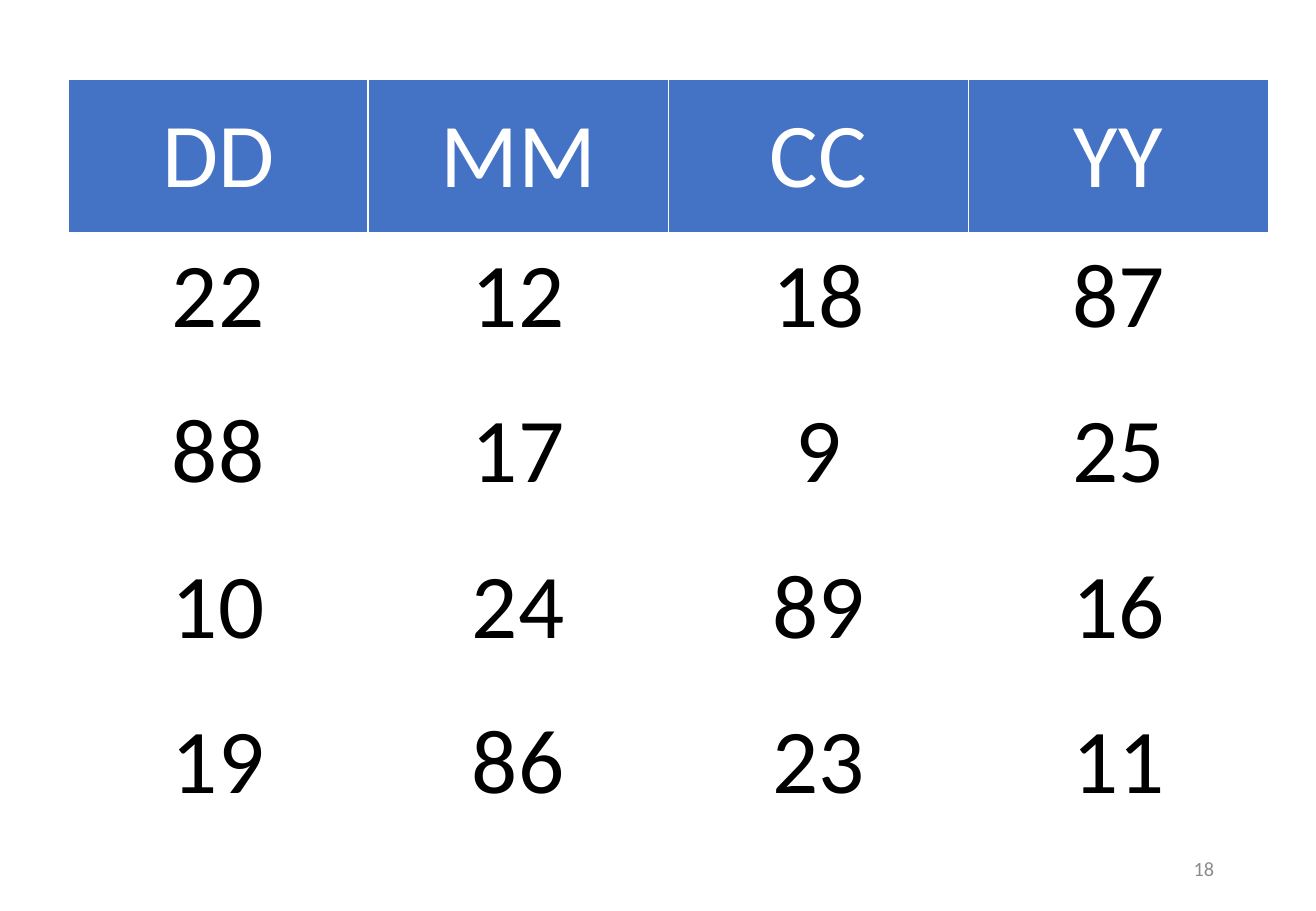
from pptx import Presentation
from pptx.dml.color import RGBColor
from pptx.enum.text import MSO_ANCHOR as Anchor, PP_ALIGN as Align
from pptx.oxml.ns import qn
from pptx.util import Emu, Pt
from lxml.etree import SubElement

BLUE = RGBColor(0x44, 0x72, 0xC4)
WHITE = RGBColor(0xFF, 0xFF, 0xFF)
BLACK = RGBColor(0x00, 0x00, 0x00)
GRAY = RGBColor(0x8C, 0x8C, 0x8C)

SQUARE = [
    ["DD", "MM", "CC", "YY"],
    ["22", "12", "18", "87"],
    ["88", "17", "9", "25"],
    ["10", "24", "89", "16"],
    ["19", "86", "23", "11"],
]


def px(length):
    return Emu(length * 9144)


class SlideBuilder:
    font_name = "Calibri"

    def __init__(self, deck):
        self.page = deck.slides.add_slide(deck.slide_layouts[6])

    def style_text(self, frame, size, color, align):
        for para in frame.paragraphs:
            para.alignment = align
            for span in para.runs:
                span.font.name = self.font_name
                span.font.size = Pt(size)
                span.font.bold = False
                span.font.color.rgb = color

    def set_borders(self, cell, color, widths):
        properties = cell._tc.get_or_add_tcPr()
        for side, width in widths.items():
            line = SubElement(properties, qn(f"a:ln{side}"), w=str(Pt(width)))
            fill = SubElement(line, qn("a:solidFill"))
            SubElement(fill, qn("a:srgbClr"), val=str(color))

    def add_table(self, rows, left, top, column_width, row_height, size):
        row_count, column_count = len(rows), len(rows[0])
        table = self.page.shapes.add_table(
            row_count, column_count, px(left), px(top),
            px(column_width * column_count), px(row_height * row_count),
        ).table
        table.horz_banding = False
        for column in table.columns:
            column.width = px(column_width)
        for row_index, values in enumerate(rows):
            is_header = row_index == 0
            table.rows[row_index].height = px(row_height)
            for column_index, value in enumerate(values):
                cell = table.cell(row_index, column_index)
                cell.text_frame.text = value
                cell.margin_left = cell.margin_right = px(8)
                cell.margin_top = cell.margin_bottom = px(5)
                cell.vertical_anchor = Anchor.MIDDLE if is_header else Anchor.TOP
                self.style_text(cell.text_frame, size, WHITE if is_header else BLACK, Align.CENTER)
                top_width = 3 if row_index == 1 else 1
                bottom_width = 3 if is_header else 1
                self.set_borders(cell, WHITE, {"L": 1, "R": 1, "T": top_width, "B": bottom_width})
                if is_header:
                    cell.fill.solid()
                    cell.fill.fore_color.rgb = BLUE
                else:
                    cell.fill.background()

    def add_text(self, text, left, top, width, height, size, color, align):
        box = self.page.shapes.add_textbox(px(left), px(top), px(width), px(height))
        frame = box.text_frame
        frame.word_wrap = True
        frame.vertical_anchor = Anchor.MIDDLE
        frame.text = text
        self.style_text(frame, size, color, align)


def main():
    deck = Presentation()
    deck.slide_width, deck.slide_height = px(1083), px(750)
    builder = SlideBuilder(deck)
    builder.add_table(SQUARE, left=56, top=65, column_width=247, row_height=128, size=54)
    builder.add_text("18", left=765, top=695, width=244, height=40, size=12, color=GRAY, align=Align.RIGHT)
    deck.save("out.pptx")


if __name__ == "__main__":
    main()
